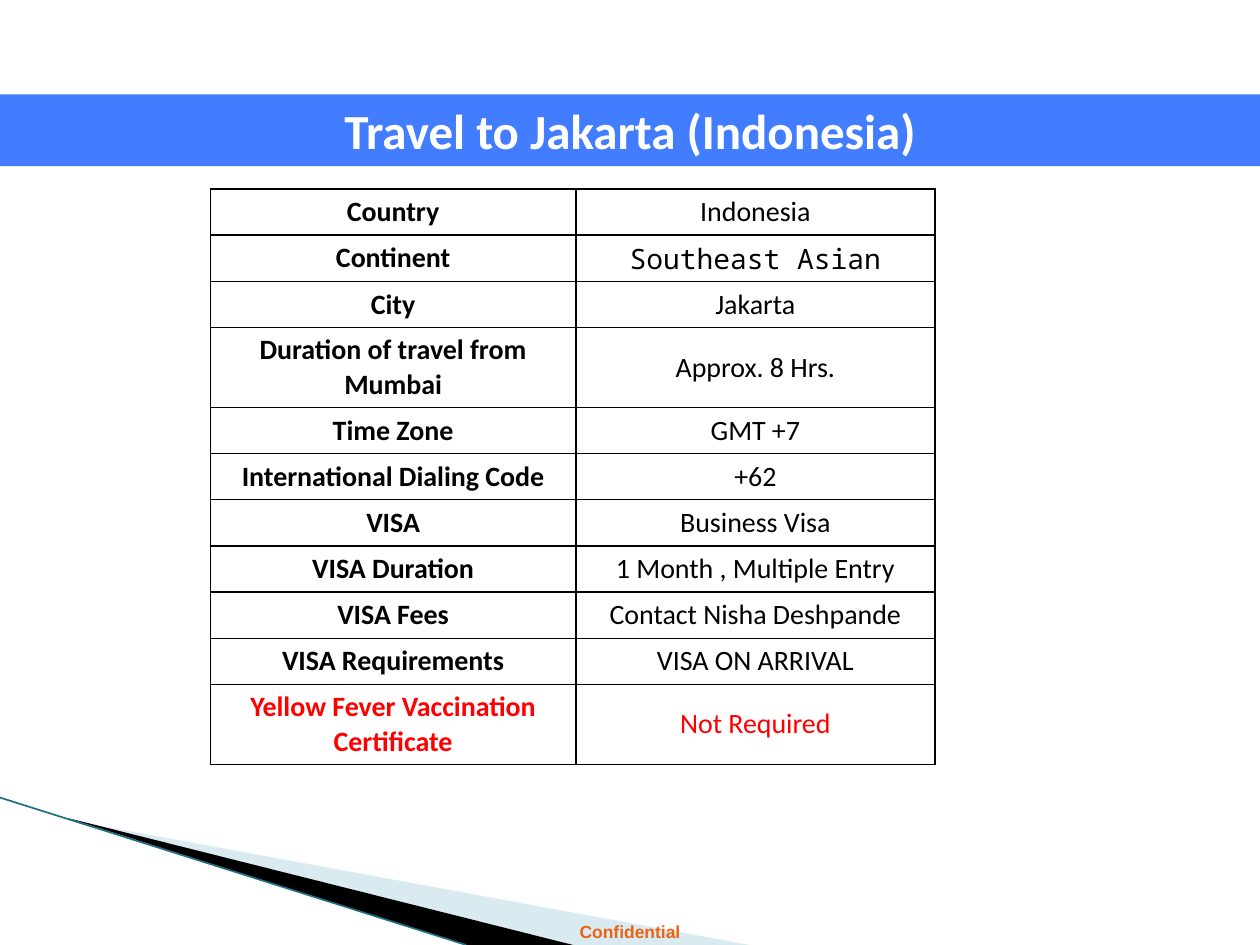
import pptx
import pptx.dml.color
import pptx.enum.shapes
import pptx.enum.text
import pptx.oxml
import pptx.oxml.ns
import pptx.util
import lxml.etree

COLUMNS, ROWS = 100, 75  # slide grid, one tenth of an inch per cell
CENTER = pptx.enum.text.PP_ALIGN.CENTER
MIDDLE = pptx.enum.text.MSO_ANCHOR.MIDDLE


def color(value):
    return pptx.dml.color.RGBColor.from_string(value)


def add_xml(parent, tag, **attributes):
    return lxml.etree.SubElement(parent, pptx.oxml.ns.qn(tag), attributes)


class SlideBuilder:
    font = "Calibri"
    black, white, red = "000000", "FFFFFF", "FF0000"
    blue, orange, teal, pale = "437DFF", "EB6312", "1F7083", "A0CBDC"

    def __init__(self, deck):
        self.cell_width = deck.slide_width / COLUMNS
        self.cell_height = deck.slide_height / ROWS
        self.slide = deck.slides.add_slide(deck.slide_layouts[6])
        self.shapes = self.slide.shapes

    def x(self, columns):
        return pptx.util.Emu(round(columns * self.cell_width))

    def y(self, rows):
        return pptx.util.Emu(round(rows * self.cell_height))

    def area(self, left, top, width, height):
        return self.x(left), self.y(top), self.x(width), self.y(height)

    def set_text(self, frame, text, size, ink, bold=True, font=None):
        para = frame.paragraphs[0]
        para.text = text
        para.alignment = CENTER
        para.font.name = font or self.font
        para.font.size = pptx.util.Pt(size)
        para.font.bold = bold
        para.font.color.rgb = color(ink)

    def paint(self, shape, fill):
        shape.shadow.inherit = False
        shape.fill.solid()
        shape.fill.fore_color.rgb = color(fill)
        shape.line.fill.background()

    def polygon(self, points, fill, opacity=100):
        corners = [(self.x(column), self.y(row)) for column, row in points]
        builder = self.shapes.build_freeform(*corners[0], scale=1.0)
        builder.add_line_segments(corners[1:], close=True)
        shape = builder.convert_to_shape()
        self.paint(shape, fill)
        if opacity < 100:
            tint = shape._element.spPr.find(
                "/".join(map(pptx.oxml.ns.qn, ("a:solidFill", "a:srgbClr"))))
            add_xml(tint, "a:alpha", val=str(opacity * 1000))

    def line(self, start, end, ink, width):
        connector = self.shapes.add_connector(
            pptx.enum.shapes.MSO_CONNECTOR.STRAIGHT,
            self.x(start[0]), self.y(start[1]), self.x(end[0]), self.y(end[1]))
        connector.line.color.rgb = color(ink)
        connector.line.width = pptx.util.Pt(width)
        add_xml(connector._element.spPr, "a:effectLst")

    def text(self, area, text, size, ink, font):
        box = self.shapes.add_textbox(*self.area(*area))
        box.text_frame.word_wrap = True
        self.set_text(box.text_frame, text, size, ink, font=font)

    def banner(self, area, text, size, fill, ink):
        shape = self.shapes.add_shape(
            pptx.enum.shapes.MSO_SHAPE.RECTANGLE, *self.area(*area))
        self.paint(shape, fill)
        shape.text_frame.vertical_anchor = MIDDLE
        self.set_text(shape.text_frame, text, size, ink)

    def border(self, cell):
        properties = cell._tc.get_or_add_tcPr()
        for position, side in enumerate(("a:lnL", "a:lnR", "a:lnT", "a:lnB")):
            edge = add_xml(properties, side, w=str(int(pptx.util.Pt(1))))
            add_xml(add_xml(edge, "a:solidFill"), "a:srgbClr", val=self.black)
            properties.insert(position, edge)

    def table(self, area, widths, records, size):
        """Each record is label, value, lines of text, ink, value font."""
        table = self.shapes.add_table(
            len(records), len(widths), *self.area(*area)).table
        for column, width in zip(table.columns, widths):
            column.width = self.x(width)
        # Every row has one grid row of padding plus its lines of text
        line_count = sum(record[2] for record in records)
        line_height = (area[3] - len(records)) / line_count
        for row, (label, value, lines, ink, font) in zip(table.rows, records):
            row.height = self.y(1 + lines * line_height)
            texts = ((label, True, self.font), (value, False, font))
            for cell, (text, bold, face) in zip(row.cells, texts):
                cell.fill.solid()
                cell.fill.fore_color.rgb = color(self.white)
                cell.vertical_anchor = MIDDLE
                cell.margin_top = cell.margin_bottom = self.y(0.2)
                self.set_text(cell.text_frame, text, size, ink, bold, face)
                self.border(cell)


def main():
    deck = pptx.Presentation()
    deck.slide_width = pptx.util.Inches(10)
    deck.slide_height = pptx.util.Inches(7.5)
    page = SlideBuilder(deck)

    # Corner wedges
    page.polygon([(5.5, 65.1), (59.5, 75), (45.6, 75), (5.5, 65)],
                 page.pale, opacity=40)
    page.polygon([(5.3, 64.9), (45.5, 75), (37, 75)], page.black)
    page.line((0, 63.3), (37, 75), page.teal, 0.95)

    # Footer and title
    page.text((0, 72.6, 100, 2.7), "Confidential", 10, page.orange, "Arial")
    page.banner((0, 7.5, 100, 5.7), "Travel to Jakarta (Indonesia)", 28,
                page.blue, page.white)

    # Travel facts
    def fact(label, value, lines=1, ink=page.black, font=page.font):
        return label, value, lines, ink, font

    page.table((16.7, 15, 57.5, 45.7), (29, 28.5), [
        fact("Country", "Indonesia"),
        fact("Continent", "Southeast Asian", font="Noto Sans Mono"),
        fact("City", "Jakarta"),
        fact("Duration of travel from Mumbai", "Approx. 8 Hrs.", lines=2),
        fact("Time Zone", "GMT +7"),
        fact("International Dialing Code", "+62"),
        fact("VISA", "Business Visa"),
        fact("VISA Duration", "1 Month , Multiple Entry"),
        fact("VISA Fees", "Contact Nisha Deshpande"),
        fact("VISA Requirements", "VISA ON ARRIVAL"),
        fact("Yellow Fever Vaccination Certificate", "Not Required",
             lines=2, ink=page.red),
    ], 16)

    deck.save("out.pptx")


if __name__ == "__main__":
    main()
